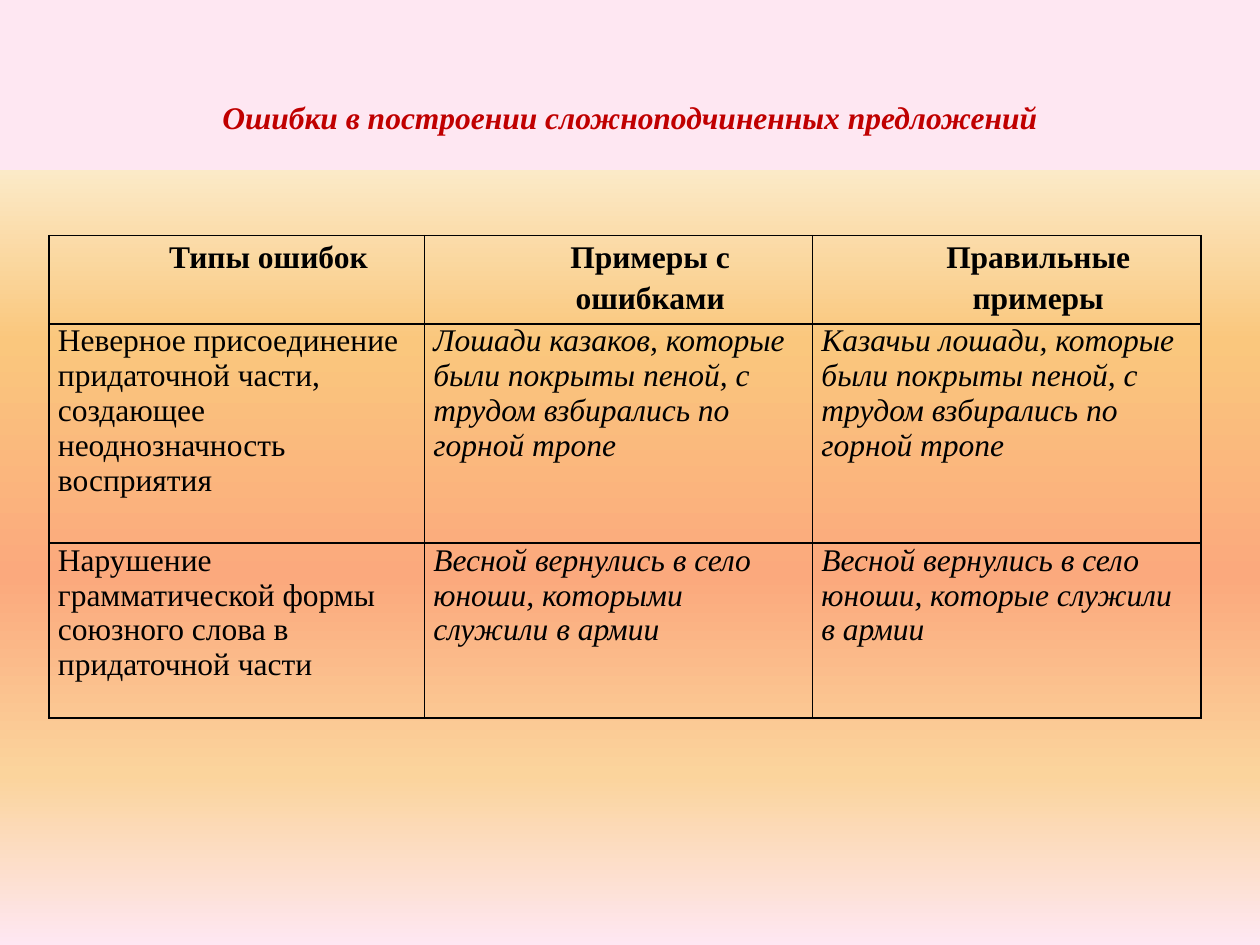
from dataclasses import dataclass

from lxml import etree
from pptx import Presentation, util as u
from pptx.dml import color
from pptx.enum import text
from pptx.oxml import ns


@dataclass(frozen=True)
class Theme:
    font: str = "Times New Roman"
    size: int = 18
    title: str = "C00000"
    ink: str = "000000"
    border: float = 1
    # Position in percent and colour, from top to bottom
    backdrop: tuple = (
        (0, "FEE7F2"), (18, "FEE7F2"), (18, "FBEAC7"), (36, "FAC77D"),
        (61, "FBA97D"), (82, "FBD49C"), (100, "FEE7F2"),
    )


class SlideBuilder:
    def __init__(self, presentation, theme):
        self.theme = theme
        self.slide = presentation.slides.add_slide(presentation.slide_layouts[5])

    def add_run(self, paragraph, words, colour, bold=False, italic=False):
        run = paragraph.add_run()
        run.text = words
        font = run.font
        font.name, font.size = self.theme.font, u.Pt(self.theme.size)
        font.bold, font.italic = bold, italic
        font.color.rgb = color.RGBColor.from_string(colour)

    def background(self):
        fill = self.slide.background.fill
        fill.gradient()
        fill.gradient_angle = 270
        stops = self.slide.element.find(".//" + ns.qn("a:gsLst"))
        for stop in list(stops):
            stops.remove(stop)
        for position, colour in self.theme.backdrop:
            stop = etree.SubElement(stops, ns.qn("a:gs"), pos=str(position * 1000))
            etree.SubElement(stop, ns.qn("a:srgbClr"), val=colour)

    def title(self, words, left, top, width, height):
        shape = self.slide.shapes.title
        shape.left, shape.top = u.Inches(left), u.Inches(top)
        shape.width, shape.height = u.Inches(width), u.Inches(height)
        frame = shape.text_frame
        frame.vertical_anchor = text.MSO_ANCHOR.MIDDLE
        paragraph = frame.paragraphs[0]
        paragraph.alignment = text.PP_ALIGN.CENTER
        self.add_run(paragraph, words, self.theme.title, bold=True, italic=True)

    def cell_borders(self, cell):
        properties = cell._tc.get_or_add_tcPr()
        for index, side in enumerate(("lnL", "lnR", "lnT", "lnB")):
            line = etree.Element(ns.qn("a:" + side), w=str(u.Pt(self.theme.border)))
            fill = etree.SubElement(line, ns.qn("a:solidFill"))
            etree.SubElement(fill, ns.qn("a:srgbClr"), val=self.theme.ink)
            properties.insert(index, line)

    def fill_cell(self, cell, lines, header, italic):
        cell.fill.background()
        cell.margin_left = cell.margin_right = u.Inches(0.07)
        cell.margin_top = cell.margin_bottom = 0
        self.cell_borders(cell)
        frame = cell.text_frame
        for index, words in enumerate(lines):
            paragraph = frame.add_paragraph() if index else frame.paragraphs[0]
            if header:
                paragraph.alignment = text.PP_ALIGN.CENTER
                paragraph.line_spacing = 1.15
                paragraph._p.get_or_add_pPr().set("marL", str(u.Inches(0.5)))
            self.add_run(paragraph, words, self.theme.ink, header, italic)

    def table(self, rows, left, top, widths, heights):
        frame = self.slide.shapes.add_table(
            len(heights), len(widths), u.Inches(left), u.Inches(top),
            u.Inches(sum(widths)), u.Inches(sum(heights)))
        table = frame.table
        table.first_row = table.horz_banding = False
        for column, width in zip(table.columns, widths):
            column.width = u.Inches(width)
        for row, height in zip(table.rows, heights):
            row.height = u.Inches(height)
        for row_index, row in enumerate(rows):
            for column_index, lines in enumerate(row):
                header = row_index == 0
                # Example sentences are in italics
                italic = not header and column_index > 0
                self.fill_cell(table.cell(row_index, column_index), lines, header, italic)


# Each cell is a list of paragraphs
ROWS = [
    [["Типы ошибок"], ["Примеры с ошибками"], ["Правильные примеры"]],
    [["Неверное присоединение придаточной части, создающее неоднозначность",
      "восприятия"],
     ["Лошади казаков, которые были покрыты пеной, с трудом взбирались по горной тропе"],
     ["Казачьи лошади, которые были покрыты пеной, с трудом взбирались по горной тропе"]],
    [["Нарушение грамматической формы", "союзного слова в придаточной части"],
     ["Весной вернулись в село юноши, которыми служили в армии"],
     ["Весной вернулись в село юноши, которые служили в армии"]],
]


def main():
    presentation = Presentation()
    presentation.slide_width, presentation.slide_height = u.Inches(10), u.Inches(7.5)
    builder = SlideBuilder(presentation, Theme())

    # Backdrop and heading
    builder.background()
    builder.title("Ошибки в построении сложноподчиненных предложений", 0.5, 0.3, 9, 1.25)

    # Error types with wrong and right examples
    builder.table(ROWS, 0.39, 1.87, widths=(2.98, 3.08, 3.08), heights=(0.7, 1.74, 1.39))

    presentation.save("out.pptx")


if __name__ == "__main__":
    main()
